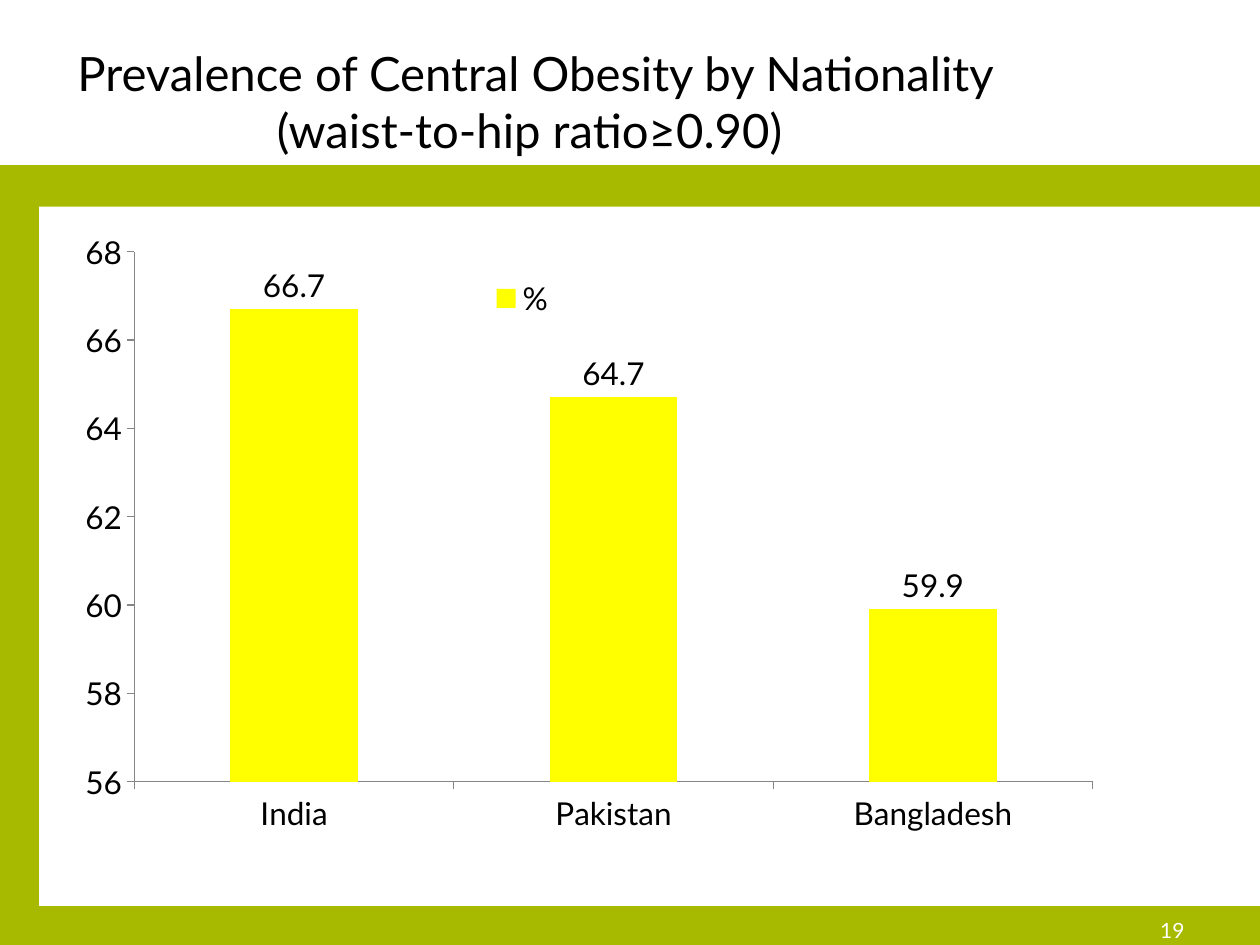
from lxml import etree
from pptx import Presentation
from pptx.chart.data import CategoryChartData
from pptx.dml.color import RGBColor
from pptx.enum.chart import XL_CHART_TYPE, XL_LABEL_POSITION, XL_LEGEND_POSITION, XL_TICK_MARK
from pptx.enum.shapes import MSO_SHAPE
from pptx.enum.text import MSO_ANCHOR, MSO_AUTO_SIZE, PP_ALIGN
from pptx.oxml.ns import qn
from pptx.util import Inches, Pt

COLUMN = XL_CHART_TYPE.COLUMN_CLUSTERED
OUTSIDE_END = XL_LABEL_POSITION.OUTSIDE_END
LEGEND_RIGHT = XL_LEGEND_POSITION.RIGHT
TICK_OUT = XL_TICK_MARK.OUTSIDE
RECT = MSO_SHAPE.RECTANGLE
MIDDLE = MSO_ANCHOR.MIDDLE
NO_FIT = MSO_AUTO_SIZE.NONE
CENTER, RIGHT = PP_ALIGN.CENTER, PP_ALIGN.RIGHT

FONT = "Lato"
COLORS = {"green": "A8BA00", "white": "FFFFFF", "black": "000000",
          "yellow": "FFFF00", "axis": "868686"}


def rgb(name):
    return RGBColor.from_string(COLORS[name])


def format_font(font, size, color):
    for key, value in {"name": FONT, "size": Pt(size), "bold": False}.items():
        setattr(font, key, value)
    font.color.rgb = rgb(color)


def write_text(sp, text, size, color, align):
    tf = sp.text_frame
    settings = {"word_wrap": True, "auto_size": NO_FIT, "vertical_anchor": MIDDLE}
    for key, value in settings.items():
        setattr(tf, key, value)
    p = tf.paragraphs[0]
    p.text = text
    p.alignment = align
    for r in p.runs:
        format_font(r.font, size, color)


def add_panel(s, box, color):
    sp = s.shapes.add_shape(RECT, *map(Inches, box))
    sp.shadow.inherit = False
    sp.fill.solid()
    sp.fill.fore_color.rgb = rgb(color)
    sp.line.fill.background()


def add_frame(s, box):
    left, top, width, height = box
    add_panel(s, box, "green")
    add_panel(s, (left + 0.31, top + 0.33, width - 0.31, height - 0.64), "white")


def add_title(s, box):
    sp = s.shapes.title
    sp.left, sp.top, sp.width, sp.height = map(Inches, box)
    write_text(sp, "Prevalence of Central Obesity by Nationality\v(waist-to-hip ratio≥0.90) ",
               27, "black", CENTER)


def set_layout(parent, before, values, inner=False):
    for old in parent.findall(qn("c:layout")):
        parent.remove(old)
    layout = etree.Element(qn("c:layout"))
    manual = etree.SubElement(layout, qn("c:manualLayout"))
    items = [("layoutTarget", "inner")] if inner else []
    items += [("xMode", "edge"), ("yMode", "edge")] + list(zip("xywh", values))
    for tag, value in items:
        etree.SubElement(manual, qn("c:" + tag)).set("val", str(value))
    parent.find(qn(before)).addprevious(layout)


def add_obesity_chart(s, box):
    data = CategoryChartData()
    data.categories = ["India", "Pakistan", "Bangladesh"]
    data.add_series("%", [66.7, 64.7, 59.9])
    chart = s.shapes.add_chart(COLUMN, *map(Inches, box), data).chart
    chart.has_title = False
    format_font(chart.font, 18, "black")

    plot = chart.plots[0]
    plot.gap_width = 150
    plot.vary_by_categories = False
    plot.has_data_labels = True
    labels = plot.data_labels
    labels.show_value = True
    labels.position = OUTSIDE_END
    series = plot.series[0]
    series.format.fill.solid()
    series.format.fill.fore_color.rgb = rgb("yellow")

    for axis in (chart.category_axis, chart.value_axis):
        axis.major_tick_mark = TICK_OUT
        axis.has_major_gridlines = False
        axis.format.line.color.rgb = rgb("axis")
        axis.format.line.width = Pt(0.75)
    scale = {"minimum_scale": 56, "maximum_scale": 68, "major_unit": 2}
    for key, value in scale.items():
        setattr(chart.value_axis, key, value)

    chart.has_legend = True
    legend = chart.legend
    legend.position = LEGEND_RIGHT
    legend.include_in_layout = False
    set_layout(legend._element, "c:overlay", (0.37, 0.09, 0.07, 0.07))
    plot_area = plot._element.getparent()
    set_layout(plot_area, "c:barChart", (0.063, 0.05, 0.845, 0.85), inner=True)


def add_page_number(s, box):
    sp = s.shapes.add_textbox(*map(Inches, box))
    write_text(sp, "19", 12, "white", RIGHT)


def main():
    prs = Presentation()
    prs.slide_width, prs.slide_height = Inches(10), Inches(7.5)
    s = prs.slides.add_slide(prs.slide_layouts[5])
    add_frame(s, (0, 1.31, 10, 6.19))
    add_title(s, (0.5, 0.3, 7.5, 1))
    add_obesity_chart(s, (0.5, 1.75, 9, 4.95))
    add_page_number(s, (7.17, 7.18, 2.33, 0.4))
    prs.save("out.pptx")


if __name__ == "__main__":
    main()
